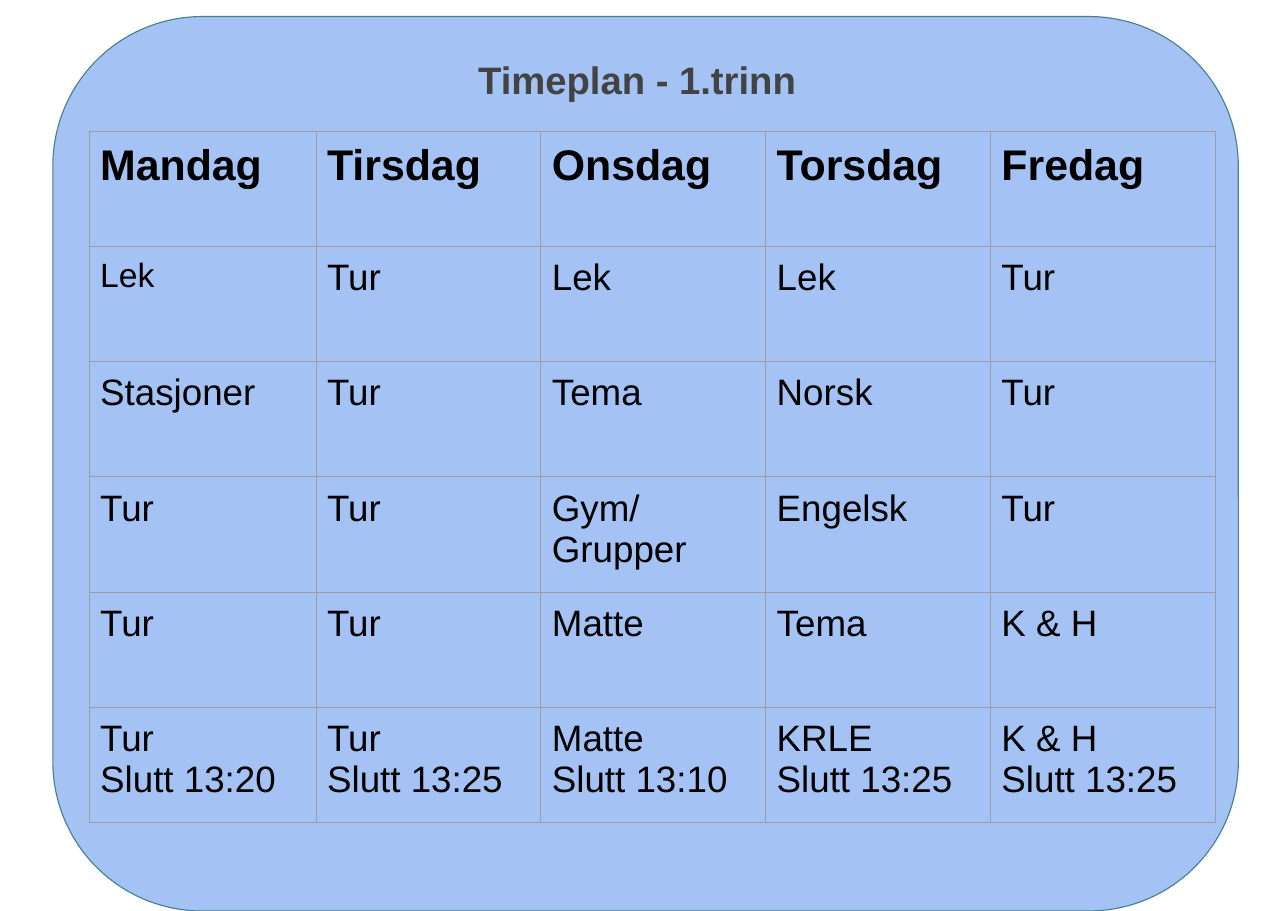
from dataclasses import dataclass

from lxml.etree import SubElement
from pptx import Presentation
from pptx.dml.color import RGBColor as Rgb
from pptx.enum.shapes import MSO_SHAPE as Shape
from pptx.enum.text import MSO_ANCHOR as Anchor, MSO_AUTO_SIZE as Fit, PP_ALIGN as Align
from pptx.oxml.ns import qn
from pptx.util import Pt


@dataclass(frozen=True)
class Theme:
    font: str = "Arial"
    panel: str = "A4C2F4"
    edge: str = "45818E"
    grid: str = "9E9E9E"
    title: str = "434343"
    ink: str = "000000"
    head: float = 25
    day: float = 28
    body: float = 24
    small: float = 22
    line: float = 0.75
    pad: float = 7.2


THEME = Theme()
WIDE, HIGH = 841.68, 595.44
COLS = [148.3] + [146.9] * 4
ROW = 75.35
PLAN = [
    ["Mandag", "Tirsdag", "Onsdag", "Torsdag", "Fredag"],
    ["Lek", "Tur", "Lek", "Lek", "Tur"],
    ["Stasjoner", "Tur", "Tema", "Norsk", "Tur"],
    ["Tur", "Tur", "Gym/\nGrupper", "Engelsk", "Tur"],
    ["Tur", "Tur", "Matte", "Tema", "K & H"],
    ["Tur\nSlutt 13:20", "Tur\nSlutt 13:25", "Matte\nSlutt 13:10",
     "KRLE\nSlutt 13:25", "K & H\nSlutt 13:25"],
]


def style(frame, size, color, bold=False):
    for para in frame.paragraphs:
        para.alignment = Align.LEFT
        for run in para.runs:
            font = run.font
            font.name, font.size, font.bold = THEME.font, Pt(size), bold
            font.color.rgb = Rgb.from_string(color)


def inset(box):
    box.margin_left = box.margin_right = Pt(THEME.pad)
    box.margin_top = box.margin_bottom = Pt(THEME.pad)


def set_title(slide, text):
    title = slide.shapes.title
    title.left, title.top = Pt(305.28), Pt(28.08)
    title.width, title.height = Pt(231.84), Pt(41.76)
    frame = title.text_frame
    frame.text = text
    frame.word_wrap = True
    frame.auto_size = Fit.NONE
    frame.vertical_anchor = Anchor.MIDDLE
    frame.paragraphs[0].line_spacing = 1.2
    inset(frame)
    style(frame, THEME.head, THEME.title, True)


def add_panel(slide):
    panel = slide.shapes.add_shape(
        Shape.ROUNDED_RECTANGLE, Pt(34.56), Pt(10.8), Pt(774.72), Pt(584.64))
    panel.adjustments[0] = 0.167
    panel.shadow.inherit = False
    panel.fill.solid()
    panel.fill.fore_color.rgb = Rgb.from_string(THEME.panel)
    panel.line.color.rgb = Rgb.from_string(THEME.edge)
    panel.line.width = Pt(THEME.line)
    slide.shapes.title.element.addprevious(panel.element)


def add_edges(cell):
    props = cell._tc.get_or_add_tcPr()
    for side in "LRTB":
        edge = SubElement(props, qn(f"a:ln{side}"), w=str(Pt(THEME.line)))
        fill = SubElement(edge, qn("a:solidFill"))
        SubElement(fill, qn("a:srgbClr"), val=THEME.grid)


def fill_cell(cell, text, size, bold):
    cell.text = text
    cell.vertical_anchor = Anchor.TOP
    inset(cell)
    add_edges(cell)
    cell.fill.background()
    style(cell.text_frame, size, THEME.ink, bold)


def pick_size(row, col):
    if row == 0:
        return THEME.day
    return THEME.small if (row, col) == (1, 0) else THEME.body


def add_plan(slide):
    table = slide.shapes.add_table(
        len(PLAN), len(COLS), Pt(58.3), Pt(85.7),
        Pt(sum(COLS)), Pt(ROW * len(PLAN))).table
    table.first_row = table.horz_banding = False
    for col, width in zip(table.columns, COLS):
        col.width = Pt(width)
    for r, texts in enumerate(PLAN):
        table.rows[r].height = Pt(ROW)
        for c, text in enumerate(texts):
            fill_cell(table.cell(r, c), text, pick_size(r, c), r == 0)


def main():
    deck = Presentation()
    deck.slide_width, deck.slide_height = Pt(WIDE), Pt(HIGH)
    slide = deck.slides.add_slide(deck.slide_layouts[5])
    set_title(slide, "Timeplan - 1.trinn")
    add_panel(slide)
    add_plan(slide)
    deck.save("out.pptx")


if __name__ == "__main__":
    main()
